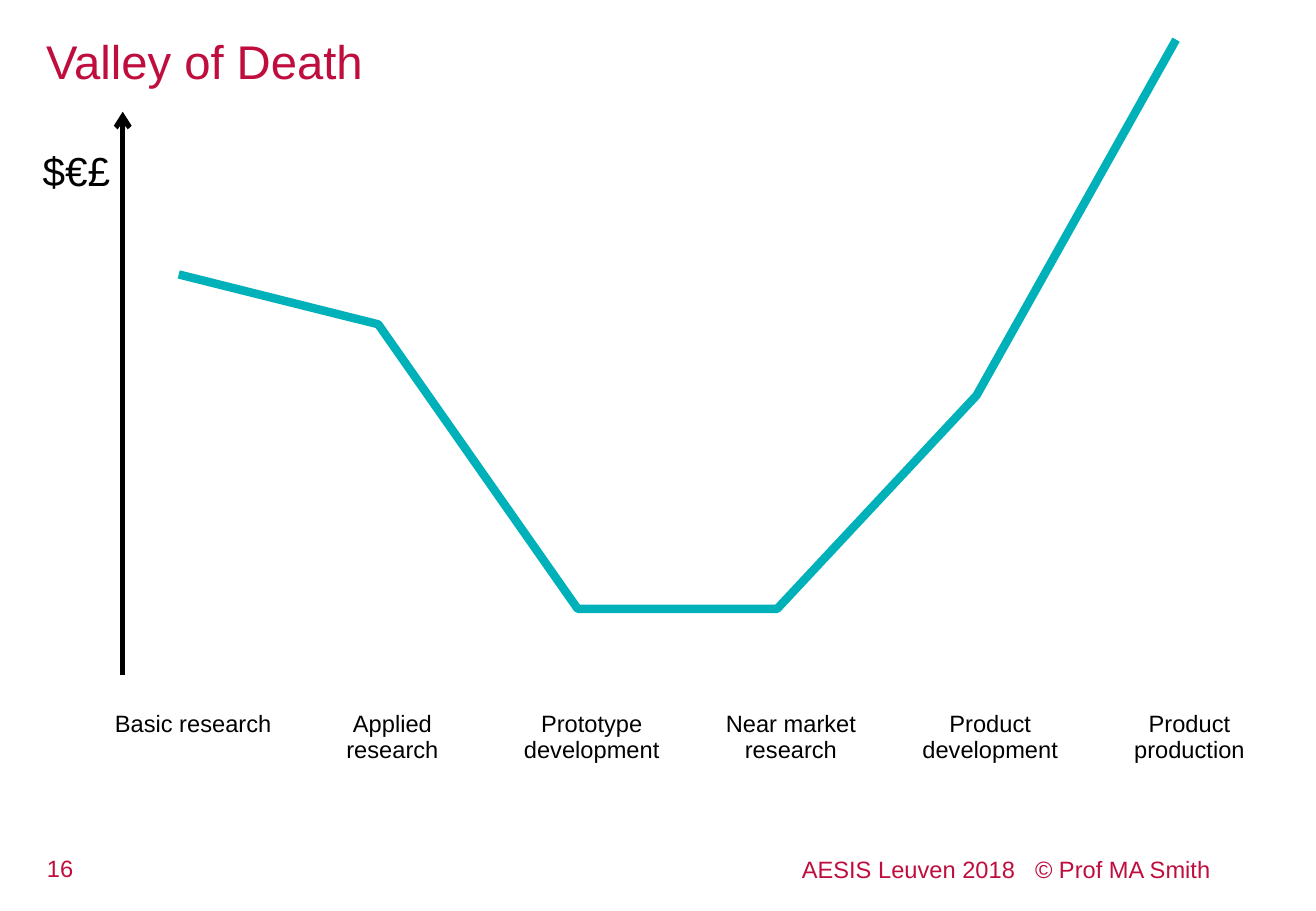
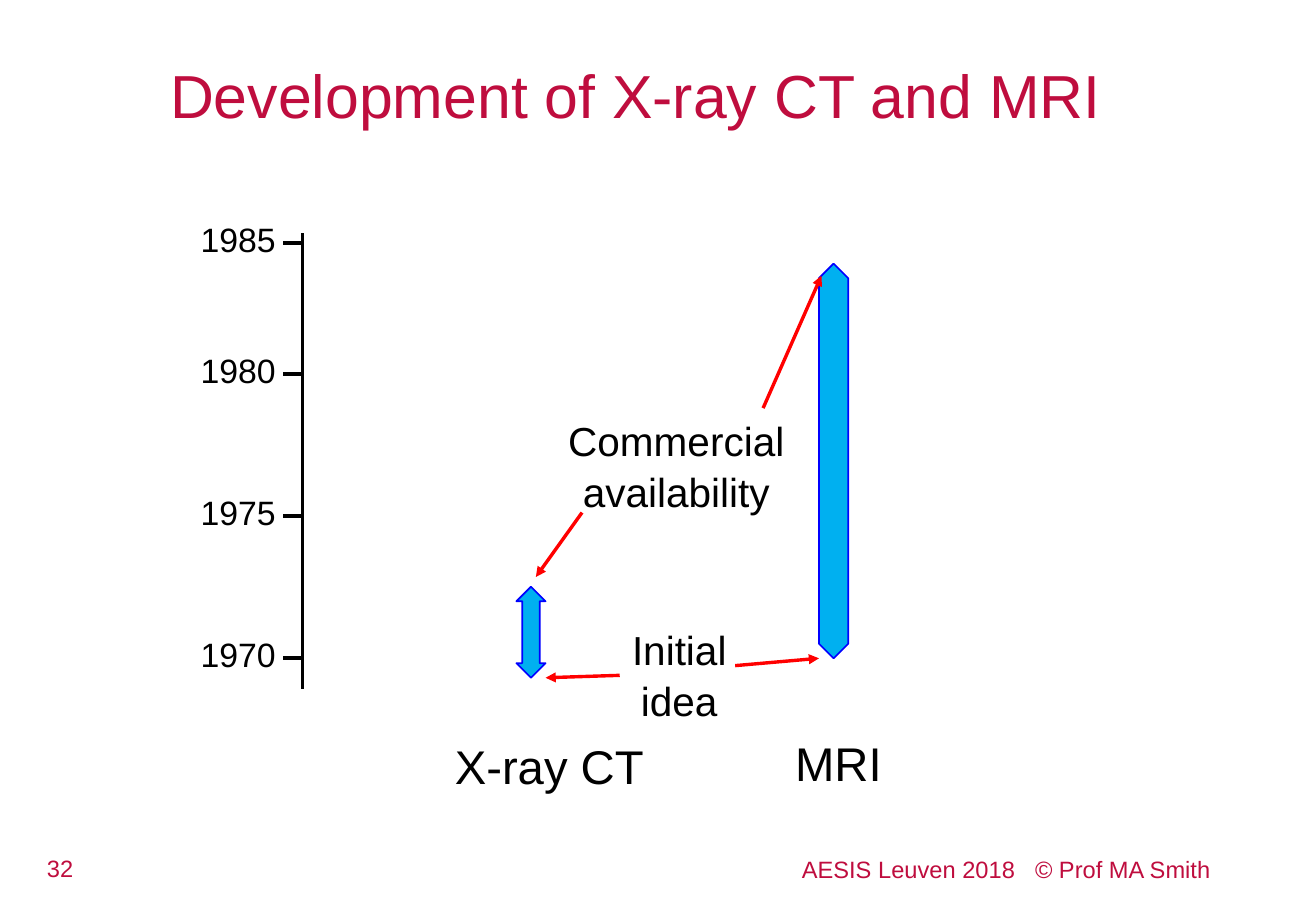
from lxml import etree
from pptx import Presentation
from pptx.chart.data import XyChartData
from pptx.dml.color import RGBColor
from pptx.enum.chart import XL_CHART_TYPE as ChartType
from pptx.enum.shapes import MSO_CONNECTOR as Connector, MSO_SHAPE as Shape
from pptx.enum.text import MSO_ANCHOR as Anchor, MSO_AUTO_SIZE as AutoSize, PP_ALIGN as Align
from pptx.oxml import parse_xml
from pptx.oxml.ns import nsdecls, qn
from pptx.util import Inches, Pt

CRIMSON = RGBColor(0xBF, 0x0D, 0x3E)
BLACK = RGBColor(0, 0, 0)
TEAL = RGBColor(0x00, 0xB1, 0xB9)
SKY = RGBColor(0x00, 0xB0, 0xF0)
BLUE = RGBColor(0, 0, 0xFF)
RED = RGBColor(0xFF, 0, 0)
FONT = "Arial"


class Deck:
    """House style plus the slide being built."""

    def __init__(self):
        self.prs = Presentation()
        self.prs.slide_width, self.prs.slide_height = Inches(10.83), Inches(7.5)

    def new_slide(self, number, title, box, size):
        self.slide = self.prs.slides.add_slide(self.prs.slide_layouts[5])
        self.title(title, box, size)
        self.text(number, (0.14, 6.98, 0.71, 0.34), 14, CRIMSON)
        self.footer()

    def style(self, paragraph, size, color=BLACK, align=Align.CENTER):
        paragraph.alignment = align
        for run in paragraph.runs:
            run.font.name, run.font.size = FONT, Pt(size)
            run.font.color.rgb = color

    def title(self, text, box, size):
        title = self.slide.shapes.title
        title.left, title.top, title.width, title.height = map(Inches, box)
        frame = title.text_frame
        frame.text = text
        frame.auto_size = AutoSize.NONE
        frame.vertical_anchor = Anchor.MIDDLE
        frame.margin_left = 0
        self.style(frame.paragraphs[0], size, CRIMSON, Align.LEFT)

    def text(self, text, box, size, color=BLACK, spacing=None):
        frame = self.slide.shapes.add_textbox(*map(Inches, box)).text_frame
        frame.word_wrap = True
        frame.text = text
        frame.paragraphs[0].line_spacing = spacing
        self.style(frame.paragraphs[0], size, color)

    def footer(self):
        frame = self.slide.shapes.add_textbox(*map(Inches, (3.45, 7.06, 6.61, 0.26))).text_frame
        frame.word_wrap = True
        frame.vertical_anchor = Anchor.MIDDLE
        credit = frame.paragraphs[0]
        credit.line_spacing = 0.6
        for part in ("AESIS Leuven 2018", " ", "© Prof MA Smith"):
            credit.add_run().text = part
        self.style(credit, 14, CRIMSON, Align.RIGHT)
        # Widen the gap between event and author
        credit.runs[1].font._element.set("spc", "780")

    def line(self, start, end, color, width, head=None):
        line = self.slide.shapes.add_connector(
            Connector.STRAIGHT, *map(Inches, (*start, *end)))
        line.line.color.rgb, line.line.width = color, Pt(width)
        if head:
            etree.SubElement(line.line._get_or_add_ln(), qn("a:tailEnd"), type=head)
        etree.SubElement(line._element.spPr, qn("a:effectLst"))

    def span_arrow(self, box, head_ratio):
        arrow = self.slide.shapes.add_shape(Shape.UP_DOWN_ARROW, *map(Inches, box))
        arrow.adjustments[0], arrow.adjustments[1] = 0.5, head_ratio
        arrow.shadow.inherit = False
        arrow.fill.solid()
        arrow.fill.fore_color.rgb = SKY
        arrow.line.color.rgb, arrow.line.width = BLUE, Pt(1)

    def label_row(self, labels, box):
        table = self.slide.shapes.add_table(1, len(labels), *map(Inches, box)).table
        table.first_row = table.horz_banding = False
        for cell, label in zip(table.rows[0].cells, labels):
            cell.fill.background()
            cell.text = label
            self.style(cell.text_frame.paragraphs[0], 14)

    def curve(self, values, box):
        data = XyChartData()
        series = data.add_series("Series 1")
        for stage, value in enumerate(values, 1):
            series.add_data_point(stage, value)
        chart = self.slide.shapes.add_chart(
            ChartType.XY_SCATTER_SMOOTH_NO_MARKERS, *map(Inches, box), data).chart
        chart.has_legend = chart.has_title = False
        chart.font.name, chart.font.size = FONT, Pt(10)
        chart.font.color.rgb = BLACK
        for axis, top in ((chart.category_axis, len(values) + 1), (chart.value_axis, 100)):
            axis.minimum_scale, axis.maximum_scale = 0, top
            axis.has_major_gridlines = False
            axis.visible = False
        plot = chart.plots[0]
        plot.vary_by_categories = False
        path_line = plot.series[0]
        path_line.smooth = True
        path_line.format.line.color.rgb = TEAL
        path_line.format.line.width = Pt(5)
        # Transparent background and fixed plot area
        chart_part = chart._chartSpace.find(qn("c:chart"))
        chart_part.addnext(parse_xml(
            f'<c:spPr {nsdecls("c", "a")}><a:noFill/><a:ln><a:noFill/></a:ln></c:spPr>'))
        plot_area = chart_part.find(qn("c:plotArea"))
        for old in plot_area.findall(qn("c:layout")):
            plot_area.remove(old)
        layout = etree.Element(qn("c:layout"))
        manual = etree.SubElement(layout, qn("c:manualLayout"))
        for tag, value in (("layoutTarget", "inner"), ("xMode", "edge"), ("yMode", "edge"),
                           ("x", "0.02"), ("y", "0.08"), ("w", "0.96"), ("h", "0.907")):
            etree.SubElement(manual, qn(f"c:{tag}"), val=value)
        plot_area.insert(0, layout)


def valley_of_death(deck):
    deck.new_slide("16", "Valley of Death", (0.38, 0.21, 9.97, 0.58), 28)
    deck.label_row(("Basic research", "Applied research", "Prototype development",
                    "Near market research", "Product development", "Product production"),
                   (0.77, 5.8, 9.84, 0.7))
    # Money axis
    deck.line((1.01, 5.56), (1.01, 0.92), BLACK, 3, "arrow")
    deck.text("$€£", (0, 1.15, 1.26, 0.5), 24)
    deck.curve((67, 60, 20, 20, 50, 100), (-0.41, -0.19, 11.97, 6.46))


def ct_and_mri(deck):
    deck.new_slide("32", "Development of X-ray CT and MRI", (1.4, 0.36, 8.18, 0.83), 36)

    # Time axis
    axis_x = 2.49
    deck.line((axis_x, 1.92), (axis_x, 5.67), BLACK, 2.25)
    for year, y in (("1985", 2), ("1980", 3.08), ("1975", 4.25), ("1970", 5.42)):
        deck.text(year, (1.44, y - 0.25, 1.04, 0.44), 20)
        deck.line((axis_x - 0.16, y), (axis_x, y), BLACK, 2.25)

    # Development spans
    deck.span_arrow((4.25, 4.83, 0.24, 0.75), 0.603)
    deck.span_arrow((6.74, 2.17, 0.24, 3.25), 2.613)

    # Annotations and their pointers
    deck.text("Initial idea", (5.03, 5.08, 1.12, 0.91), 24, spacing=1.05)
    deck.text("Commercial availability", (4.56, 3.36, 2.01, 0.91), 24, spacing=1.05)
    for start, end in (((5.1, 5.56), (4.49, 5.58)), ((6.05, 5.48), (6.74, 5.42)),
                       ((4.79, 4.22), (4.41, 4.75)), ((6.28, 3.36), (6.76, 2.27))):
        deck.line(start, end, RED, 2, "triangle")

    # Technology names
    deck.text("X-ray CT", (3.62, 6.02, 1.8, 0.57), 28)
    deck.text("MRI", (6.42, 6, 0.96, 0.57), 28)


def main():
    deck = Deck()
    valley_of_death(deck)
    ct_and_mri(deck)
    deck.prs.save("out.pptx")


if __name__ == "__main__":
    main()
